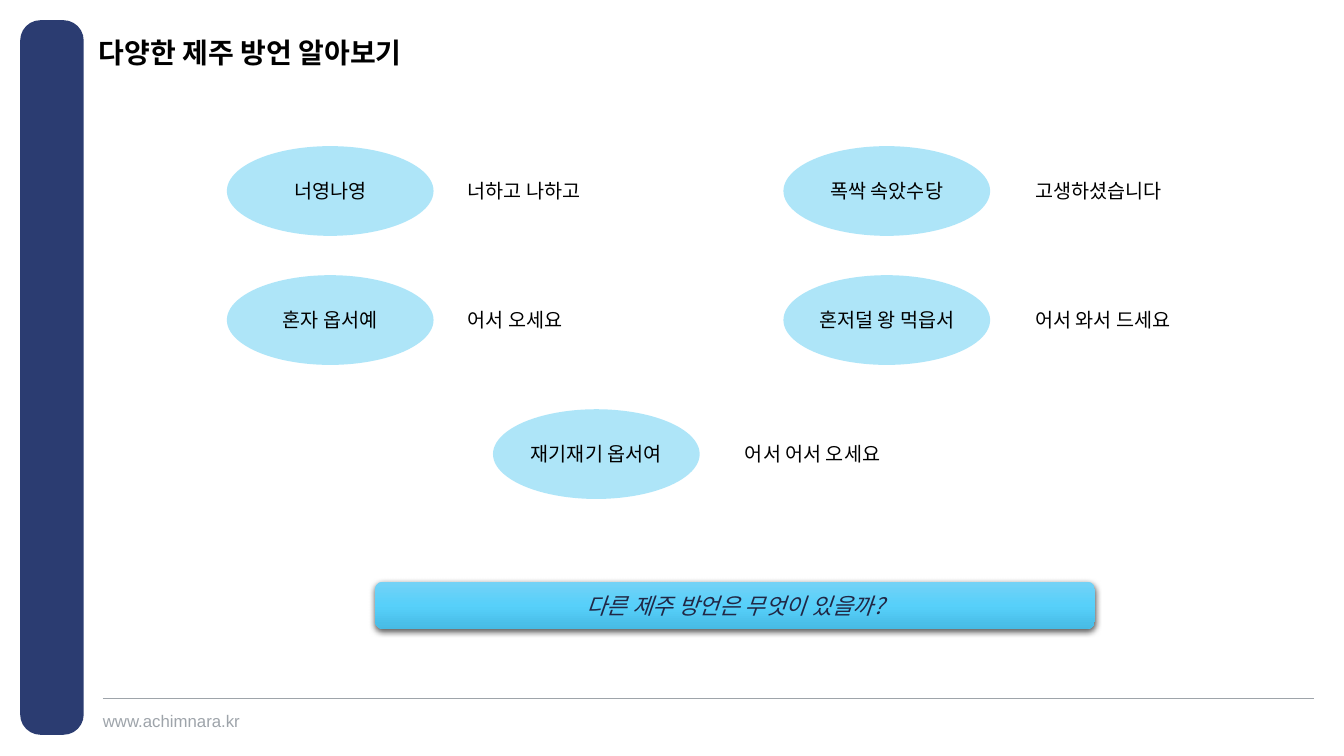
from lxml.etree import SubElement
from pptx import Presentation
from pptx.dml.color import RGBColor
from pptx.enum.shapes import MSO_CONNECTOR, MSO_SHAPE
from pptx.enum.text import MSO_ANCHOR, MSO_AUTO_SIZE, PP_ALIGN
from pptx.oxml import parse_xml
from pptx.oxml.ns import nsdecls, qn
from pptx.util import Inches, Pt

NAVY = RGBColor(0x2B, 0x3C, 0x71)
SKY = RGBColor(0x5E, 0xCC, 0xF3)
GRAY = RGBColor(0x9E, 0xA4, 0xAA)
BLACK = RGBColor(0, 0, 0)
INK = RGBColor(0x21, 0x27, 0x45)
BANNER_TOP = RGBColor(0x74, 0xD2, 0xF6)
BANNER_MIDDLE = RGBColor(0x57, 0xD0, 0xFA)
BANNER_BOTTOM = RGBColor(0x47, 0xBB, 0xE5)

LATIN = "Arial"
HANGUL = "Noto Sans CJK KR"
OVAL_WIDTH, OVAL_HEIGHT = 15.38, 11.87
LABEL_DROP, LABEL_HEIGHT = 3.65, 4.53
MEANING_WIDTH = 19.58

LEFT, MIDDLE, RIGHT = (16.88, 34.06), (36.68, 54.69), (58.29, 76.29)
ROWS = (19.33, 36.4, 54.13)
DIALECT = (
    (LEFT, ROWS[0], "너영나영", 9.3, "너하고 나하고"),
    (LEFT, ROWS[1], "혼자 옵서예", 11.93, "어서 오세요"),
    (RIGHT, ROWS[0], "폭싹 속았수당", 11.93, "고생하셨습니다"),
    (RIGHT, ROWS[1], "혼저덜 왕 먹읍서", 13.5, "어서 와서 드세요"),
    (MIDDLE, ROWS[2], "재기재기 옵서여", 13.5, "어서 어서 오세요"),
)


def write(box, text, size=14, font=HANGUL, color=BLACK, bold=False,
          italic=False, align=PP_ALIGN.LEFT, spacing=None):
    para = box.text_frame.paragraphs[0]
    para.alignment = align
    if spacing:
        para.line_spacing = spacing
    span = para.add_run()
    span.text = text
    span.font.size = Pt(size)
    span.font.bold = bold
    span.font.italic = italic
    span.font.color.rgb = color
    span.font.name = font
    SubElement(span.font._element, qn("a:ea"), typeface=HANGUL)


class Page:
    def __init__(self, deck):
        self.deck = deck
        self.slide = deck.slides.add_slide(deck.slide_layouts[6])

    def place(self, left, top, width, height):
        across, down = self.deck.slide_width / 100, self.deck.slide_height / 100
        return (round(left * across), round(top * down),
                round(width * across), round(height * down))

    def shape(self, kind, area, color, opacity=100):
        shape = self.slide.shapes.add_shape(kind, *self.place(*area))
        shape.shadow.inherit = False
        shape.line.fill.background()
        shape.fill.solid()
        shape.fill.fore_color.rgb = color
        if opacity < 100:
            tint = shape._element.spPr.find(".//" + qn("a:srgbClr"))
            SubElement(tint, qn("a:alpha"), val=str(opacity * 1000))
        return shape

    def label(self, area, text, inset=True, **style):
        box = self.slide.shapes.add_textbox(*self.place(*area))
        frame = box.text_frame
        frame.word_wrap = True
        if inset:
            frame.auto_size = MSO_AUTO_SIZE.SHAPE_TO_FIT_TEXT
        else:
            frame.margin_left = frame.margin_right = 0
            frame.margin_top = frame.margin_bottom = 0
        write(box, text, **style)

    def rule(self, start, end, height, color):
        left, top, width, _ = self.place(start, height, end - start, 0)
        line = self.slide.shapes.add_connector(
            MSO_CONNECTOR.STRAIGHT, left, top, left + width, top)
        line.line.color.rgb = color
        line.line.width = Pt(0.5)
        SubElement(line._element.spPr, qn("a:effectLst"))

    def entry(self, columns, top, word, word_width, meaning):
        oval_left, meaning_left = columns
        self.shape(MSO_SHAPE.OVAL, (oval_left, top, OVAL_WIDTH, OVAL_HEIGHT),
                   SKY, opacity=50)
        word_left = oval_left + (OVAL_WIDTH - word_width) / 2
        self.label((word_left, top + LABEL_DROP, word_width, LABEL_HEIGHT),
                   word, align=PP_ALIGN.CENTER)
        self.label((meaning_left, top + LABEL_DROP, MEANING_WIDTH, LABEL_HEIGHT),
                   meaning)

    def banner(self, area, text, colors):
        box = self.shape(MSO_SHAPE.ROUNDED_RECTANGLE, area, colors[0])
        properties = box._element.spPr
        stops = "".join(
            f'<a:gs pos="{order * 50000}"><a:srgbClr val="{color}"/></a:gs>'
            for order, color in enumerate(colors))
        gradient = parse_xml(
            f'<a:gradFill {nsdecls("a")} rotWithShape="1"><a:gsLst>{stops}</a:gsLst>'
            '<a:lin ang="5400000" scaled="0"/></a:gradFill>')
        properties.replace(properties.find(qn("a:solidFill")), gradient)
        shadow = SubElement(
            properties.find(qn("a:effectLst")), qn("a:outerShdw"),
            blurRad=str(Pt(4.5)), dist=str(Pt(1.5)), dir="5400000", rotWithShape="0")
        shade = SubElement(shadow, qn("a:srgbClr"), val=str(BLACK))
        SubElement(shade, qn("a:alpha"), val="63000")
        box.text_frame.vertical_anchor = MSO_ANCHOR.MIDDLE
        write(box, text, size=16, color=INK, italic=True, align=PP_ALIGN.CENTER)


def main():
    deck = Presentation()
    deck.slide_width, deck.slide_height = Inches(13.33), Inches(7.5)
    page = Page(deck)
    sidebar = page.shape(MSO_SHAPE.ROUNDED_RECTANGLE, (1.5, 2.67, 4.73, 94.53), NAVY)
    sidebar.adjustments[0] = 0.32
    page.rule(7.65, 97.75, 92.4, GRAY)
    page.label((7.65, 94, 11.25, 2.67), "www.achimnara.kr", inset=False,
               size=12, font=LATIN, color=GRAY)
    page.label((7.35, 5.2, 59.04, 3.73), "다양한 제주 방언 알아보기", inset=False,
               size=20, font=LATIN, bold=True, spacing=0.9)
    for entry in DIALECT:
        page.entry(*entry)
    page.banner((27.91, 76.93, 53.56, 6.27), "다른 제주 방언은 무엇이 있을까?",
                (BANNER_TOP, BANNER_MIDDLE, BANNER_BOTTOM))
    deck.save("out.pptx")


if __name__ == "__main__":
    main()
